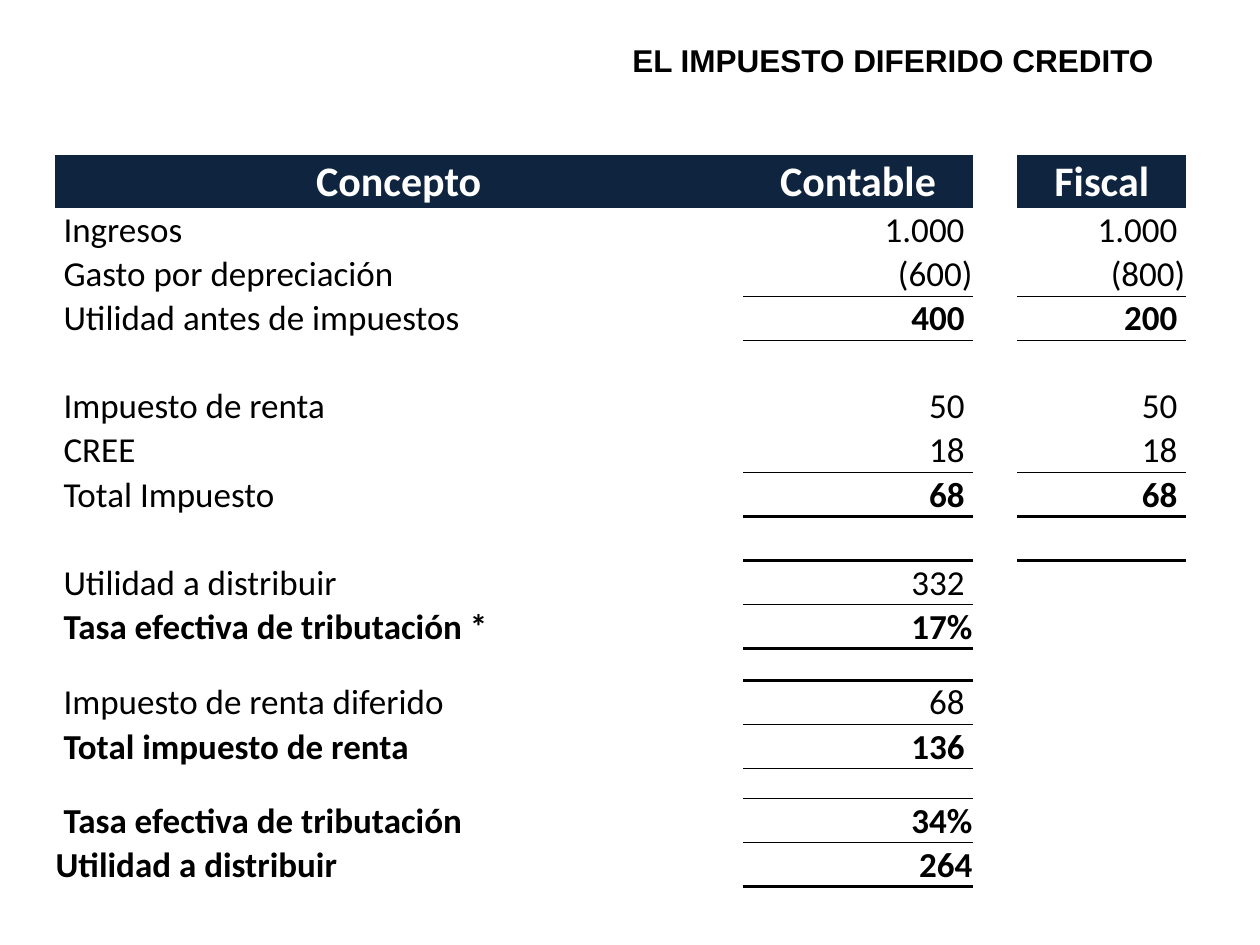
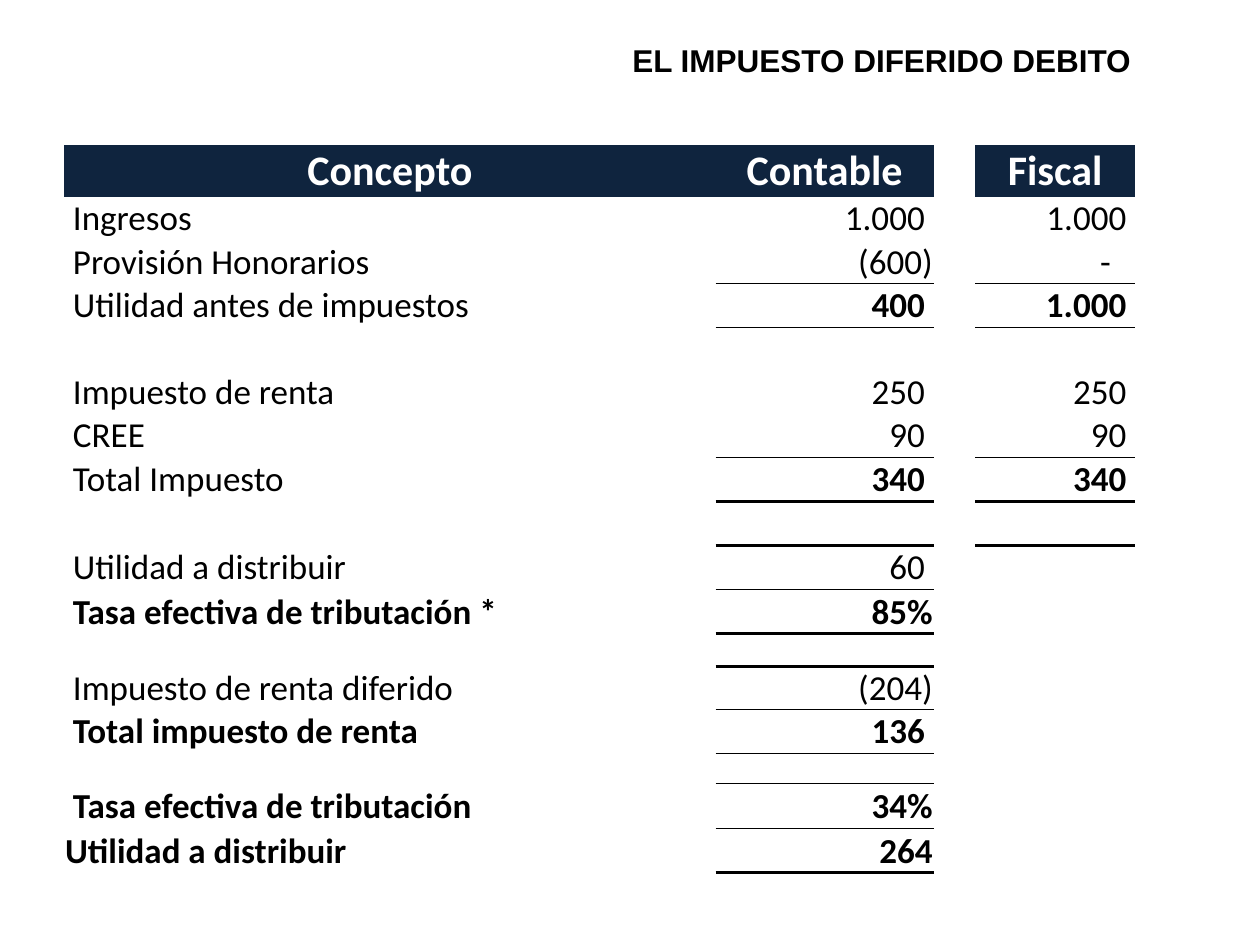
from lxml import etree
from pptx import Presentation
from pptx import util as u
from pptx.dml.color import RGBColor
from pptx.enum import text as t
from pptx.oxml.ns import qn

NAVY, WHITE, BLACK = "0F243E", "FFFFFF", "000000"
COLS, ROWS = 100, 75  # slide grid, one unit is a tenth of an inch
PLAIN = "{2D5ABB26-0587-4C30-8999-92F81FD0307C}"  # no style, no grid
HEAD = ("Concepto", "Contable", "", "Fiscal")

# Shared layout of the statement, by row index
TOTALS = {3, 7, 10, 13, 15, 16}
THIN, THICK = 0.5, 2
RULES = {2: THIN, 6: THIN, 7: THICK, 9: THIN, 10: THICK,
         12: THIN, 14: THIN, 15: THIN, 16: THICK}
LAST_TAX = 7  # the fiscal column ends here
LAST = 16
SPACE = 4.5  # width of one blank at 20 pt


def rgb(code):
    return RGBColor.from_string(code)


def put(frame, words, size=20, font="Calibri", color=BLACK, bold=False,
        align=t.PP_ALIGN.LEFT):
    para = frame.paragraphs[0]
    para.alignment = align
    run = para.add_run()
    run.text = words
    run.font.size, run.font.name, run.font.bold = u.Pt(size), font, bold
    run.font.color.rgb = rgb(color)


def edge(tc, side, width):
    """Add a black border; call top before bottom, and both before the fill."""
    line = etree.SubElement(tc.get_or_add_tcPr(), qn("a:ln" + side),
                            w=str(u.Pt(width)))
    fill = etree.SubElement(line, qn("a:solidFill"))
    etree.SubElement(fill, qn("a:srgbClr"), val=BLACK)


class Deck:
    def __init__(self):
        self.prs = Presentation()
        self.prs.slide_width, self.prs.slide_height = u.Inches(10), u.Inches(7.5)
        self.slide = None

    def x(self, cols):
        return round(self.prs.slide_width * cols / COLS)

    def y(self, rows):
        return round(self.prs.slide_height * rows / ROWS)

    def page(self):
        self.slide = self.prs.slides.add_slide(self.prs.slide_layouts[6])

    def title(self, words, width):
        box = self.slide.shapes.add_textbox(
            self.x(49.2), self.y(2.8), self.x(width), self.y(4))
        box.text_frame.word_wrap = False
        box.text_frame.auto_size = t.MSO_AUTO_SIZE.SHAPE_TO_FIT_TEXT
        put(box.text_frame, words, size=18, font="Arial", bold=True)

    def table(self, data, left, top, widths, heights):
        shape = self.slide.shapes.add_table(
            len(data), len(widths), self.x(left), self.y(top),
            self.x(sum(widths)), self.y(sum(heights)))
        grid = shape.table
        grid.first_row = grid.horz_banding = False
        next(shape.element.iter(qn("a:tableStyleId"))).text = PLAIN
        for col, width in zip(grid.columns, widths):
            col.width = self.x(width)
        for row, height in zip(grid.rows, heights):
            row.height = self.y(height)
        self.rules(shape, len(widths))
        for r, row in enumerate(data):
            for c, words in enumerate(row):
                self.cell(grid.cell(r, c), words, r, c)

    def rules(self, shape, count):
        cells = list(shape.element.iter(qn("a:tc")))
        for r, width in RULES.items():
            for c in (1, 3) if r <= LAST_TAX else (1,):
                spot = r * count + c
                edge(cells[spot], "B", width)
                if r < LAST:
                    edge(cells[spot + count], "T", width)

    def cell(self, cell, words, r, c):
        cell.vertical_anchor = t.MSO_ANCHOR.BOTTOM
        cell.margin_left = cell.margin_right = cell.margin_top = u.Pt(0.5)
        cell.margin_bottom = 0
        if r == 0 and words:
            cell.fill.solid()
            cell.fill.fore_color.rgb = rgb(NAVY)
            put(cell.text_frame, words, size=24, color=WHITE, bold=True,
                align=t.PP_ALIGN.CENTER)
            return
        cell.fill.background()
        if not words:  # keep empty rows from growing
            para = next(cell.text_frame.paragraphs[0]._p.iter(qn("a:p")))
            etree.SubElement(para, qn("a:endParaRPr"), sz="1000")
        elif c == 0:
            if r < LAST:
                cell.margin_left = u.Pt(0.5 + SPACE)
            put(cell.text_frame, words, bold=r in TOTALS and r > LAST_TAX)
        else:
            blanks = 3 if words == "-" else int(words[-1] not in ")%" and r < LAST)
            cell.margin_right = u.Pt(0.5 + blanks * SPACE)
            put(cell.text_frame, words, bold=r in TOTALS,
                align=t.PP_ALIGN.RIGHT)


def sheet(cost, book, tax):
    """Lay the figures out under the shared labels; None is an empty row."""
    names = ["Ingresos", cost, "Utilidad antes de impuestos", None,
             "Impuesto de renta", "CREE", "Total Impuesto", None,
             "Utilidad a distribuir", "Tasa efectiva de tributación *", None,
             "Impuesto de renta diferido", "Total impuesto de renta", None,
             "Tasa efectiva de tributación", "Utilidad a distribuir"]
    book, tax = iter(book.split()), iter(tax.split())
    rows = [(n, next(book), "", next(tax, "")) if n else ("",) * 4
            for n in names]
    return [HEAD] + rows


def main():
    deck = Deck()

    # Deferred tax credit
    deck.page()
    deck.table(
        sheet("Gasto por depreciación",
              "1.000 (600) 400 50 18 68 332 17% 68 136 34% 264",
              "1.000 (800) 200 50 18 68"),
        4.35, 12.3, (54.6, 18.3, 3.5, 13.4),
        [4.2] + [3.5] * 10 + [2.5] + [3.5] * 2 + [2.4] + [3.5] * 2)
    deck.title("EL IMPUESTO DIFERIDO CREDITO", 44)

    # Deferred tax debit
    deck.page()
    deck.title("EL IMPUESTO DIFERIDO DEBITO", 42.1)
    deck.table(
        sheet("Provisión Honorarios",
              "1.000 (600) 400 250 90 340 60 85% (204) 136 34% 264",
              "1.000 - 1.000 250 90 340"),
        5.1, 11.5, (51.7, 17.3, 3.3, 12.7),
        [4.1] + [3.45] * 6 + [3.5] * 2 + [3.45, 3.55, 2.6]
        + [3.45] * 2 + [2.4] + [3.55] * 2)

    deck.prs.save("out.pptx")


if __name__ == "__main__":
    main()
